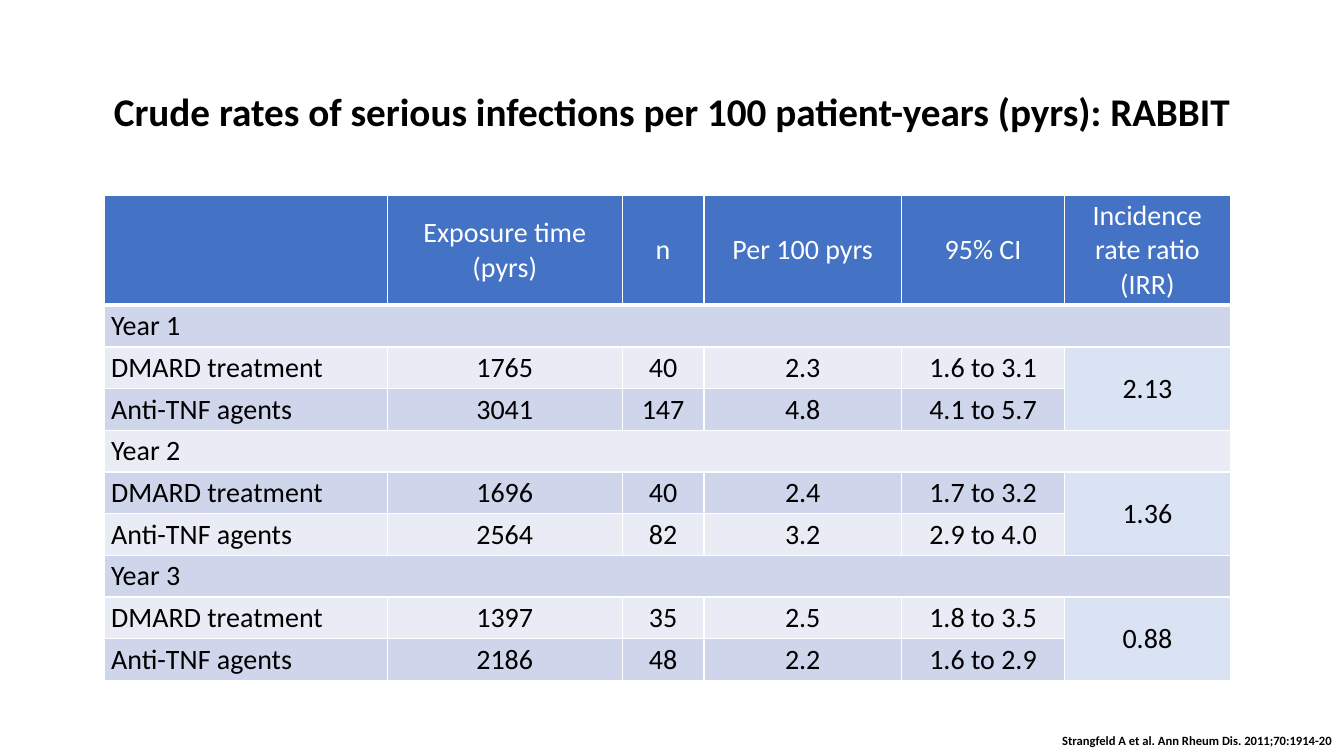
from lxml import etree
from pptx import Presentation
from pptx.dml.color import RGBColor
from pptx.enum import text as t
from pptx.oxml import ns
from pptx.util import Cm, Pt

BLACK = RGBColor(0, 0, 0)
WHITE = RGBColor(0xFF, 0xFF, 0xFF)
BLUE = RGBColor(0x44, 0x72, 0xC4)
BANDS = (RGBColor(0xCF, 0xD5, 0xEA), RGBColor(0xE9, 0xEB, 0xF5))
PALE = RGBColor(0xDA, 0xE3, 0xF3)

LEFT, MID, RIGHT = t.PP_ALIGN.LEFT, t.PP_ALIGN.CENTER, t.PP_ALIGN.RIGHT
HEADS = ("", "Exposure time (pyrs)", "n", "Per 100 pyrs", "95% CI",
         "Incidence rate ratio (IRR)")
# Per year: the two treatment rows, then the rate ratio
YEARS = (
    (("1765", "40", "2.3", "1.6 to 3.1"),
     ("3041", "147", "4.8", "4.1 to 5.7"), "2.13"),
    (("1696", "40", "2.4", "1.7 to 3.2"),
     ("2564", "82", "3.2", "2.9 to 4.0"), "1.36"),
    (("1397", "35", "2.5", "1.8 to 3.5"),
     ("2186", "48", "2.2", "1.6 to 2.9"), "0.88"),
)
COLS = (7.14, 5.92, 2.06, 4.98, 4.11, 4.17)
HEAD_H, ROW_H = 2.74, 1.05


def write(frame, words, align, size, color, bold=False):
    par = frame.paragraphs[0]
    par.alignment = align
    run = par.add_run()
    run.text = words
    style = {"name": "Calibri", "size": Pt(size), "bold": bold}
    for key, val in style.items():
        setattr(run.font, key, val)
    run.font.color.rgb = color
    return par


def place(shape, box):
    for key, val in zip(("left", "top", "width", "height"), box):
        setattr(shape, key, Cm(val))


def edge(cell, base):
    """Draw white cell borders with the given bottom width in points."""
    props = cell._tc.get_or_add_tcPr()
    for side, wide in (("L", 1), ("R", 1), ("T", 1), ("B", base)):
        line = etree.SubElement(props, ns.qn(f"a:ln{side}"), w=str(Pt(wide)))
        fill = etree.SubElement(line, ns.qn("a:solidFill"))
        etree.SubElement(fill, ns.qn("a:srgbClr"), val=str(WHITE))


def fill_cell(cell, words, fill, align=MID, color=BLACK, base=1):
    style = {"vertical_anchor": t.MSO_ANCHOR.MIDDLE,
             "margin_left": Cm(0.18), "margin_right": Cm(0.18),
             "margin_top": Cm(0.09), "margin_bottom": Cm(0.09)}
    for key, val in style.items():
        setattr(cell, key, val)
    edge(cell, base)
    cell.fill.solid()
    cell.fill.fore_color.rgb = fill
    if words:
        write(cell.text_frame, words, align, 20, color)


def add_title(slide, box):
    title = slide.shapes.title
    place(title, box)
    frame = title.text_frame
    frame.word_wrap = True
    frame.auto_size = t.MSO_AUTO_SIZE.NONE
    frame.vertical_anchor = t.MSO_ANCHOR.MIDDLE
    par = write(frame, "Crude rates of serious infections per 100 "
                "patient-years (pyrs): RABBIT", MID, 28, BLACK, True)
    par.line_spacing = 0.9


def add_rates(slide, left, top):
    count = 1 + 3 * len(YEARS)
    high = HEAD_H + ROW_H * (count - 1)
    table = slide.shapes.add_table(count, len(COLS), Cm(left), Cm(top),
                                   Cm(sum(COLS)), Cm(high)).table
    for col, wide in zip(table.columns, COLS):
        col.width = Cm(wide)
    for num, row in enumerate(table.rows):
        row.height = Cm(ROW_H if num else HEAD_H)

    # Header row
    for col, words in enumerate(HEADS):
        fill_cell(table.cell(0, col), words, BLUE, color=WHITE, base=3)

    # Year blocks: a full-width label, two treatments, a joint ratio
    last = len(COLS) - 1
    for year, (dmard, anti, ratio) in enumerate(YEARS):
        top_row = 1 + 3 * year
        rows = ((f"Year {year + 1}",) + ("",) * (last - 1),
                ("DMARD treatment",) + dmard, ("Anti-TNF agents",) + anti)
        for num, row in enumerate(rows, top_row):
            band = BANDS[(num - 1) % 2]
            for col, words in enumerate(row):
                fill_cell(table.cell(num, col), words, band,
                          MID if col else LEFT)
        fill_cell(table.cell(top_row, last), "", BANDS[(top_row - 1) % 2])
        fill_cell(table.cell(top_row + 1, last), ratio, PALE)
        fill_cell(table.cell(top_row + 2, last), "", PALE)
        table.cell(top_row, 0).merge(table.cell(top_row, last))
        table.cell(top_row + 1, last).merge(table.cell(top_row + 2, last))


def add_cite(slide, box):
    frame = slide.shapes.add_textbox(*map(Cm, box)).text_frame
    frame.word_wrap = True
    frame.auto_size = t.MSO_AUTO_SIZE.SHAPE_TO_FIT_TEXT
    write(frame, "Strangfeld A et al. Ann Rheum Dis. 2011;70:1914-20",
          RIGHT, 9, BLACK, True)


def main():
    deck = Presentation()
    deck.slide_width, deck.slide_height = Cm(33.87), Cm(19.05)
    slide = deck.slides.add_slide(deck.slide_layouts[5])
    add_title(slide, (2.33, 1.02, 28.4 + 0.8, 3.68))
    add_rates(slide, 2.62, 4.92)
    add_cite(slide, (18.57, 18.34, 15.24, 0.64))
    deck.save("out.pptx")


if __name__ == "__main__":
    main()
